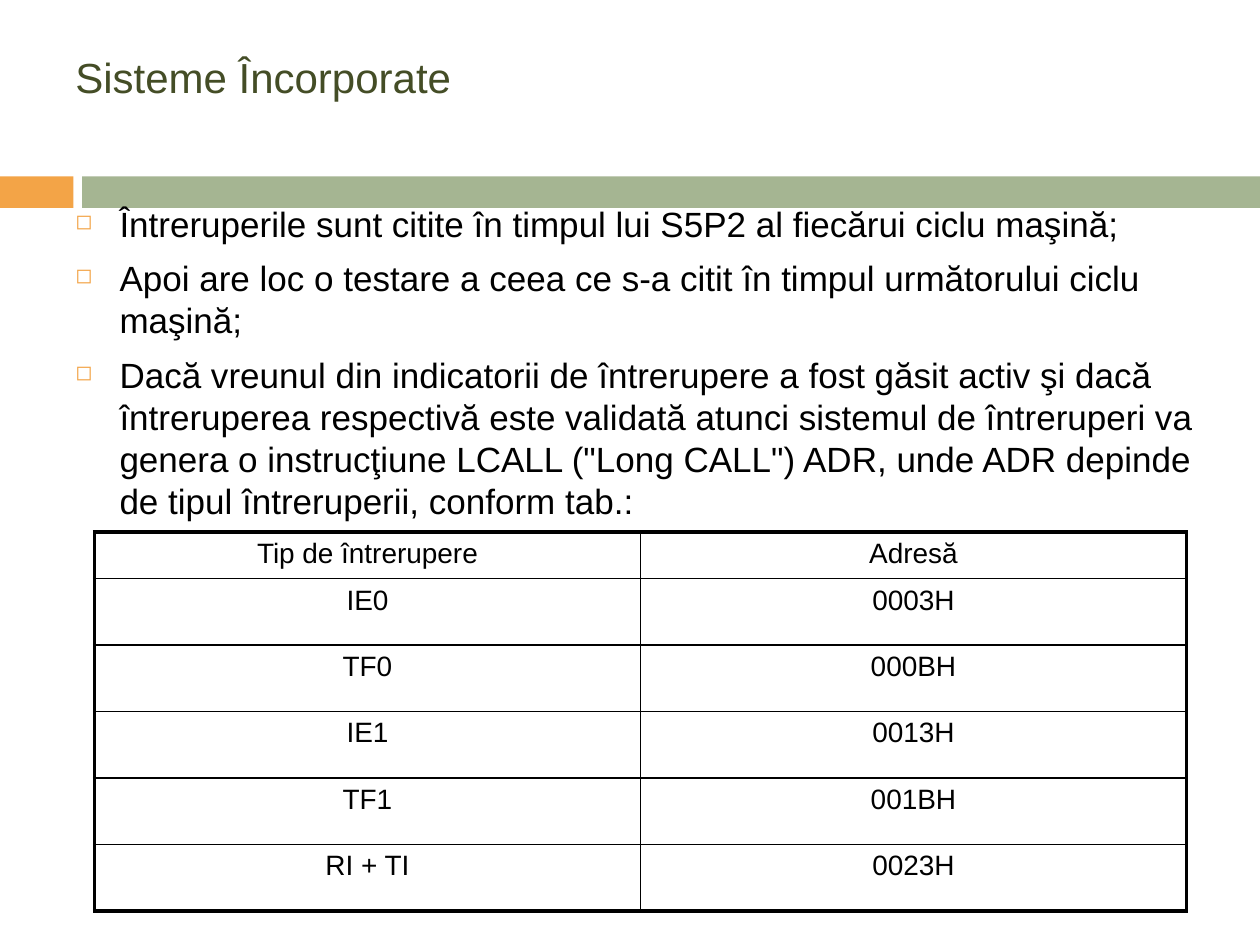
from lxml import etree
from pptx import Presentation
from pptx.dml.color import RGBColor
from pptx.enum.shapes import MSO_SHAPE as SHAPE
from pptx.enum.text import MSO_ANCHOR as ANCHOR, PP_ALIGN as ALIGN
from pptx.oxml.ns import qn
from pptx.util import Pt

COLORS = {"orange": "F3A447", "green": "A5B592", "title": "444D26",
          "text": "000000", "white": "FFFFFF"}
FONT = "Arial"
BULLETS = [
    "Întreruperile sunt citite în timpul lui S5P2 al fiecărui ciclu maşină;",
    "Apoi are loc o testare a ceea ce s-a citit în timpul următorului ciclu maşină;",
    "Dacă vreunul din indicatorii de întrerupere a fost găsit activ şi dacă "
    "întreruperea respectivă este validată atunci sistemul de întreruperi va "
    "genera o instrucţiune LCALL (\"Long CALL\") ADR, unde ADR depinde de tipul "
    "întreruperii, conform tab.:",
]
ROWS = [("Tip de întrerupere", "Adresă"), ("IE0", "0003H"), ("TF0", "000BH"),
        ("IE1", "0013H"), ("TF1", "001BH"), ("RI + TI", "0023H")]


def rgb(name):
    return RGBColor.from_string(COLORS[name])


def add_run(p, text, size, color="text"):
    r = p.add_run()
    r.text = text
    r.font.name = FONT
    r.font.size = Pt(size)
    r.font.color.rgb = rgb(color)


def add_text_frame(s, x, y, w, h):
    tf = s.shapes.add_textbox(Pt(x), Pt(y), Pt(w), Pt(h)).text_frame
    tf.word_wrap = True
    return tf


def add_solid_fill(parent, color):
    fill = etree.SubElement(parent, qn("a:solidFill"))
    etree.SubElement(fill, qn("a:srgbClr"), val=COLORS[color])


def add_band(s, x, y, w, h, split=42, gap=5):
    parts = [(x, split, "orange"), (x + split + gap, w - split - gap, "green")]
    for left, width, color in parts:
        sp = s.shapes.add_shape(SHAPE.RECTANGLE, Pt(left), Pt(y), Pt(width), Pt(h))
        sp.shadow.inherit = False
        sp.fill.solid()
        sp.fill.fore_color.rgb = rgb(color)
        sp.line.fill.background()


def add_title(s, x, y, w, h):
    tf = add_text_frame(s, x, y, w, h)
    tf.vertical_anchor = ANCHOR.MIDDLE
    add_run(tf.paragraphs[0], "Sisteme Încorporate", 24, "title")


def set_bullet(p, indent=25.2):
    pPr = p._p.get_or_add_pPr()
    pPr.set("marL", str(Pt(indent)))
    pPr.set("indent", str(-Pt(indent)))
    color = etree.SubElement(pPr, qn("a:buClr"))
    etree.SubElement(color, qn("a:srgbClr"), val=COLORS["orange"])
    etree.SubElement(pPr, qn("a:buSzPct"), val="60000")
    etree.SubElement(pPr, qn("a:buChar"), char="◻")


def add_body(s, x, y, w, h):
    tf = add_text_frame(s, x, y, w, h)
    for i, text in enumerate(BULLETS):
        p = tf.add_paragraph() if i else tf.paragraphs[0]
        p.line_spacing = Pt(24)
        p.space_before = Pt(7)
        set_bullet(p)
        add_run(p, text, 20)


def set_borders(cell, widths):
    tcPr = cell._tc.get_or_add_tcPr()
    for i, (side, width) in enumerate(widths.items()):
        ln = etree.Element(qn("a:ln" + side), w=str(Pt(width)))
        add_solid_fill(ln, "text")
        tcPr.insert(i, ln)  # borders come before the fill


def add_address_table(s, x, y, w, h, head_h=26.6):
    n_rows, n_cols = len(ROWS), len(ROWS[0])
    table = s.shapes.add_table(n_rows, n_cols, Pt(x), Pt(y), Pt(w), Pt(h)).table
    table.first_row = table.horz_banding = False
    for col in table.columns:
        col.width = Pt(w / n_cols)
    thick, thin = 2.25, 1
    for i, values in enumerate(ROWS):
        table.rows[i].height = Pt(head_h if i == 0 else (h - head_h) / (n_rows - 1))
        for j, text in enumerate(values):
            cell = table.cell(i, j)
            cell.fill.solid()
            cell.fill.fore_color.rgb = rgb("white")
            set_borders(cell, {"L": thick if j == 0 else thin,
                               "R": thick if j == n_cols - 1 else thin,
                               "T": thick if i == 0 else thin,
                               "B": thick if i == n_rows - 1 else thin})
            p = cell.text_frame.paragraphs[0]
            p.alignment = ALIGN.CENTER
            p.space_before = Pt(3.2)
            add_run(p, text, 16)


def main():
    prs = Presentation()
    prs.slide_width, prs.slide_height = Pt(720), Pt(540)
    s = prs.slides.add_slide(prs.slide_layouts[6])
    add_band(s, 0, 100.8, 720, 18)
    add_title(s, 36, 21.6, 648, 44)
    add_body(s, 36, 112.3, 671, 410.4)
    add_address_table(s, 54, 304, 624, 216.6)
    prs.save("out.pptx")


if __name__ == "__main__":
    main()
